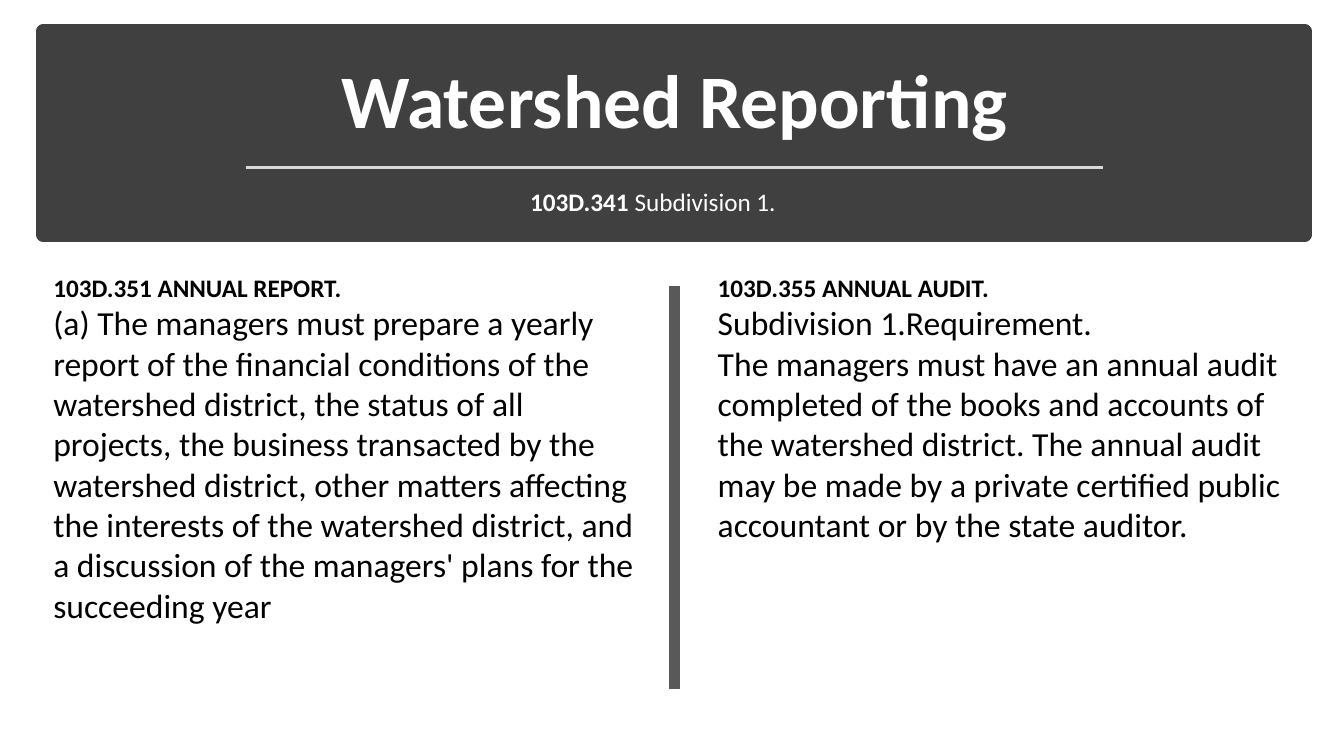
from lxml.etree import SubElement
from pptx import Presentation
from pptx.dml.color import RGBColor
from pptx.enum.shapes import MSO_CONNECTOR as Connector, MSO_SHAPE as Shape
from pptx.enum.text import MSO_ANCHOR as Anchor, PP_ALIGN as Align
from pptx.oxml.ns import qn
from pptx.util import Emu, Pt

PX = 9144  # 100 px to the inch
FONT = "Calibri"
WHITE = RGBColor(0xFF, 0xFF, 0xFF)
BLACK = RGBColor(0x00, 0x00, 0x00)
BAND = RGBColor(0x40, 0x40, 0x40)
RULE = RGBColor(0xD9, 0xD9, 0xD9)
DIVIDER = RGBColor(0x59, 0x59, 0x59)

TITLE = {"size": Pt(54), "bold": True}
HEADING = {"size": Pt(18), "bold": True}
SUBHEADING = {"size": Pt(18), "bold": False}
BODY = {"size": Pt(24), "bold": False}

COLUMN_LEFTS = (43, 702)
COLUMNS = (
    (
        "103D.351 ANNUAL REPORT.",
        "(a) The managers must prepare a yearly report of the financial "
        "conditions of the watershed district, the status of all projects, "
        "the business transacted by the watershed district, other matters "
        "affecting the interests of the watershed district, and a discussion "
        "of the managers' plans for the succeeding year",
    ),
    (
        "103D.355 ANNUAL AUDIT.",
        "Subdivision 1.Requirement.",
        "The managers must have an annual audit completed of the books and "
        "accounts of the watershed district. The annual audit may be made by "
        "a private certified public accountant or by the state auditor.",
    ),
)


def px(*lengths):
    return [Emu(length * PX) for length in lengths]


def add_band(slide, box):
    band = slide.shapes.add_shape(Shape.RECTANGLE, *px(*box))
    band.shadow.inherit = False
    band.fill.solid()
    band.fill.fore_color.rgb = BAND
    band.line.color.rgb = BAND
    band.line.width = Pt(10)


def add_line(slide, ends, color, width):
    line = slide.shapes.add_connector(Connector.STRAIGHT, *px(*ends))
    line.line.color.rgb = color
    line.line.width = Pt(width)
    SubElement(line._element.spPr, qn("a:effectLst"))


def add_text(slide, box, paragraphs, color, wrap=True, anchor=Anchor.TOP, **layout):
    """Each paragraph is a list of (text, font format) runs."""
    frame = slide.shapes.add_textbox(*px(*box)).text_frame
    frame.word_wrap = wrap
    frame.vertical_anchor = anchor
    for index, runs in enumerate(paragraphs):
        paragraph = frame.add_paragraph() if index else frame.paragraphs[0]
        for name, value in layout.items():
            setattr(paragraph, name, value)
        for text, font_format in runs:
            run = paragraph.add_run()
            run.text = text
            run.font.color.rgb = color
            for name, value in {"name": FONT, **font_format}.items():
                setattr(run.font, name, value)


def main():
    presentation = Presentation()
    presentation.slide_width, presentation.slide_height = px(1333, 750)
    slide = presentation.slides.add_slide(presentation.slide_layouts[6])

    # Header band with title and subdivision
    add_band(slide, (43, 31, 1251, 202))
    add_text(slide, (60, 47, 1218, 102), [[("Watershed Reporting", TITLE)]], WHITE,
             anchor=Anchor.BOTTOM, alignment=Align.CENTER, line_spacing=0.9)
    add_line(slide, (244, 166, 1094, 166), RULE, 1.75)
    add_text(slide, (516, 180, 266, 40),
             [[("103D.341 ", HEADING), ("Subdivision 1.", SUBHEADING)]], WHITE,
             wrap=False)

    # Two columns and the divider between them
    add_line(slide, (669, 284, 669, 684), DIVIDER, 8)
    for left, (heading, *body) in zip(COLUMN_LEFTS, COLUMNS):
        paragraphs = [[(heading, HEADING)]] + [[(text, BODY)] for text in body]
        add_text(slide, (left, 265, 605, 475), paragraphs, BLACK)

    presentation.save("out.pptx")


if __name__ == "__main__":
    main()
